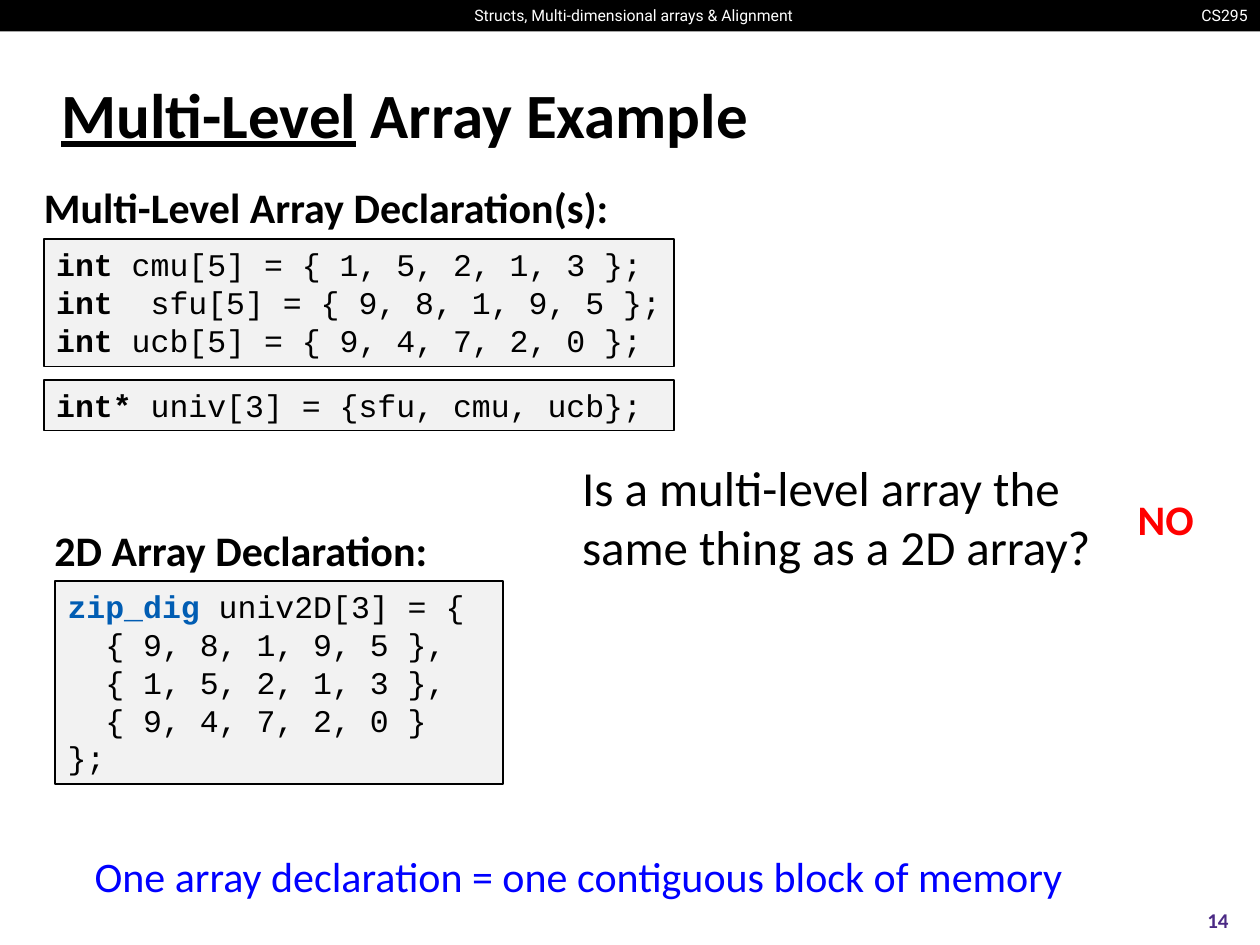
from dataclasses import dataclass
from typing import Optional

from pptx import Presentation
from pptx.dml.color import RGBColor
from pptx.enum.shapes import MSO_SHAPE
from pptx.enum.text import MSO_ANCHOR, MSO_AUTO_SIZE, PP_ALIGN
from pptx.util import Pt


@dataclass(frozen=True)
class Theme:
    black: str = "000000"
    white: str = "FFFFFF"
    code_fill: str = "F2F2F2"
    type_name: str = "015DB3"
    page: str = "4B2A85"
    note: str = "0000FF"
    answer: str = "FF0000"
    body_font: str = "Calibri"
    code_font: str = "Courier New"
    bar_font: str = "Roboto"
    title_size: float = 36
    question_size: float = 28
    heading_size: float = 24
    code_size: float = 18
    page_size: float = 12
    bar_size: float = 9


T = Theme()


@dataclass(frozen=True)
class Run:
    text: str
    bold: bool = False
    underline: bool = False
    color: Optional[str] = None


@dataclass(frozen=True)
class Box:
    left: float
    top: float
    width: float
    height: float


@dataclass(frozen=True)
class Label:
    box: Box
    runs: tuple[Run, ...]
    size: float = T.heading_size
    font: str = T.body_font
    color: str = T.black
    align: PP_ALIGN = PP_ALIGN.LEFT
    anchor: MSO_ANCHOR = MSO_ANCHOR.TOP
    wrap: bool = False


@dataclass(frozen=True)
class CodeBlock:
    box: Box
    lines: tuple[tuple[Run, ...], ...]


def points(box: Box) -> tuple[Pt, Pt, Pt, Pt]:
    return Pt(box.left), Pt(box.top), Pt(box.width), Pt(box.height)


def write_runs(p, runs: tuple[Run, ...], font: str, size: float, color: str) -> None:
    """Add runs to a paragraph; a newline in a run becomes a line break."""
    for run in runs:
        for i, piece in enumerate(run.text.split("\n")):
            if i:
                p.add_line_break()
            r = p.add_run()
            r.text = piece
            formats = {"name": font, "size": Pt(size),
                       "bold": run.bold, "underline": run.underline}
            for name, value in formats.items():
                setattr(r.font, name, value)
            r.font.color.rgb = RGBColor.from_string(run.color or color)


def add_label(s, label: Label) -> None:
    tf = s.shapes.add_textbox(*points(label.box)).text_frame
    formats = {
        "word_wrap": label.wrap,
        "vertical_anchor": label.anchor,
        "auto_size": MSO_AUTO_SIZE.NONE if label.wrap else MSO_AUTO_SIZE.SHAPE_TO_FIT_TEXT,
    }
    for name, value in formats.items():
        setattr(tf, name, value)
    p = tf.paragraphs[0]
    p.alignment = label.align
    write_runs(p, label.runs, label.font, label.size, label.color)


def add_rect(s, box: Box, fill: str):
    sp = s.shapes.add_shape(MSO_SHAPE.RECTANGLE, *points(box))
    sp.shadow.inherit = False
    sp.fill.solid()
    sp.fill.fore_color.rgb = RGBColor.from_string(fill)
    return sp


def add_code(s, block: CodeBlock) -> None:
    sp = add_rect(s, block.box, T.code_fill)
    sp.line.color.rgb = RGBColor.from_string(T.black)
    sp.line.width = Pt(1)
    tf = sp.text_frame
    formats = {"word_wrap": True, "vertical_anchor": MSO_ANCHOR.TOP,
               "auto_size": MSO_AUTO_SIZE.SHAPE_TO_FIT_TEXT}
    for name, value in formats.items():
        setattr(tf, name, value)
    for i, line in enumerate(block.lines):
        p = tf.add_paragraph() if i else tf.paragraphs[0]
        p.alignment = PP_ALIGN.LEFT
        write_runs(p, line, T.code_font, T.code_size, T.black)


def bold(text: str) -> tuple[Run, ...]:
    return (Run(text, bold=True),)


BAR = Box(0, 0, 720, 18)

LABELS = (
    Label(Box(677.5, 0, 42.5, 18), (Run("CS295"),), T.bar_size, T.bar_font,
          T.white, PP_ALIGN.RIGHT),
    Label(Box(260.5, 0, 203, 18), (Run("Structs, Multi-dimensional arrays & Alignment"),),
          T.bar_size, T.bar_font, T.white, PP_ALIGN.CENTER),
    Label(Box(28, 34.5, 662, 60),
          (Run("Multi-Level", bold=True, underline=True), Run(" Array Example", bold=True)),
          T.title_size, anchor=MSO_ANCHOR.MIDDLE, wrap=True),
    Label(Box(18, 100, 340.5, 36), bold("Multi-Level Array Declaration(s):")),
    Label(Box(24, 296, 230, 36), bold("2D Array Declaration:")),
    Label(Box(325.5, 258, 314.5, 75),
          (Run("Is a multi-level array the \nsame thing as a 2D array?"),), T.question_size),
    Label(Box(643, 278.5, 47, 36), bold("NO"), color=T.answer),
    Label(Box(47, 482.5, 593, 36),
          (Run("One array declaration = one contiguous block of memory"),), color=T.note),
    Label(Box(672, 511, 48, 29), bold("14"), T.page_size, color=T.page,
          align=PP_ALIGN.CENTER, anchor=MSO_ANCHOR.MIDDLE, wrap=True),
)

CODE_BLOCKS = (
    CodeBlock(Box(25, 136.5, 360, 73), (
        (Run("int ", bold=True), Run("cmu[5] = { 1, 5, 2, 1, 3 };")),
        (Run("int  ", bold=True), Run("sfu[5] = { 9, 8, 1, 9, 5 };")),
        (Run("int ", bold=True), Run("ucb[5] = { 9, 4, 7, 2, 0 };")),
    )),
    CodeBlock(Box(25, 217, 360, 29), (
        (Run("int*", bold=True), Run(" univ[3] = {sfu, cmu, ucb};")),
    )),
    CodeBlock(Box(31.5, 332, 256, 116), (
        (Run("zip_dig", bold=True, color=T.type_name), Run(" univ2D[3] = {")),
        (Run("  { 9, 8, 1, 9, 5 },"),),
        (Run("  { 1, 5, 2, 1, 3 },"),),
        (Run("  { 9, 4, 7, 2, 0 }"),),
        (Run("};"),),
    )),
)


def main() -> None:
    prs = Presentation()
    prs.slide_width, prs.slide_height = Pt(720), Pt(540)
    s = prs.slides.add_slide(prs.slide_layouts[6])
    add_rect(s, BAR, T.black).line.fill.background()
    for block in CODE_BLOCKS:
        add_code(s, block)
    for label in LABELS:
        add_label(s, label)
    prs.save("out.pptx")


if __name__ == "__main__":
    main()
